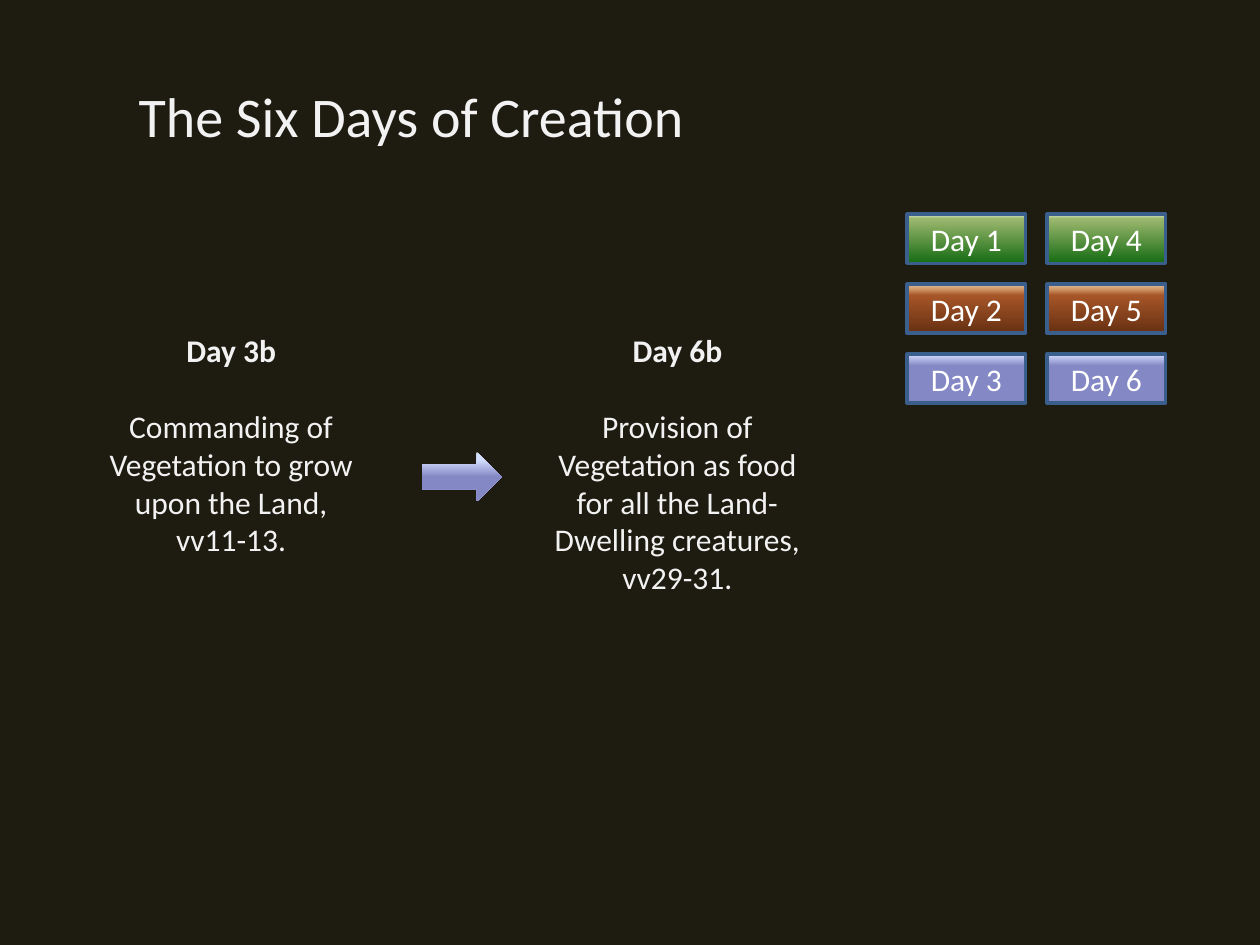
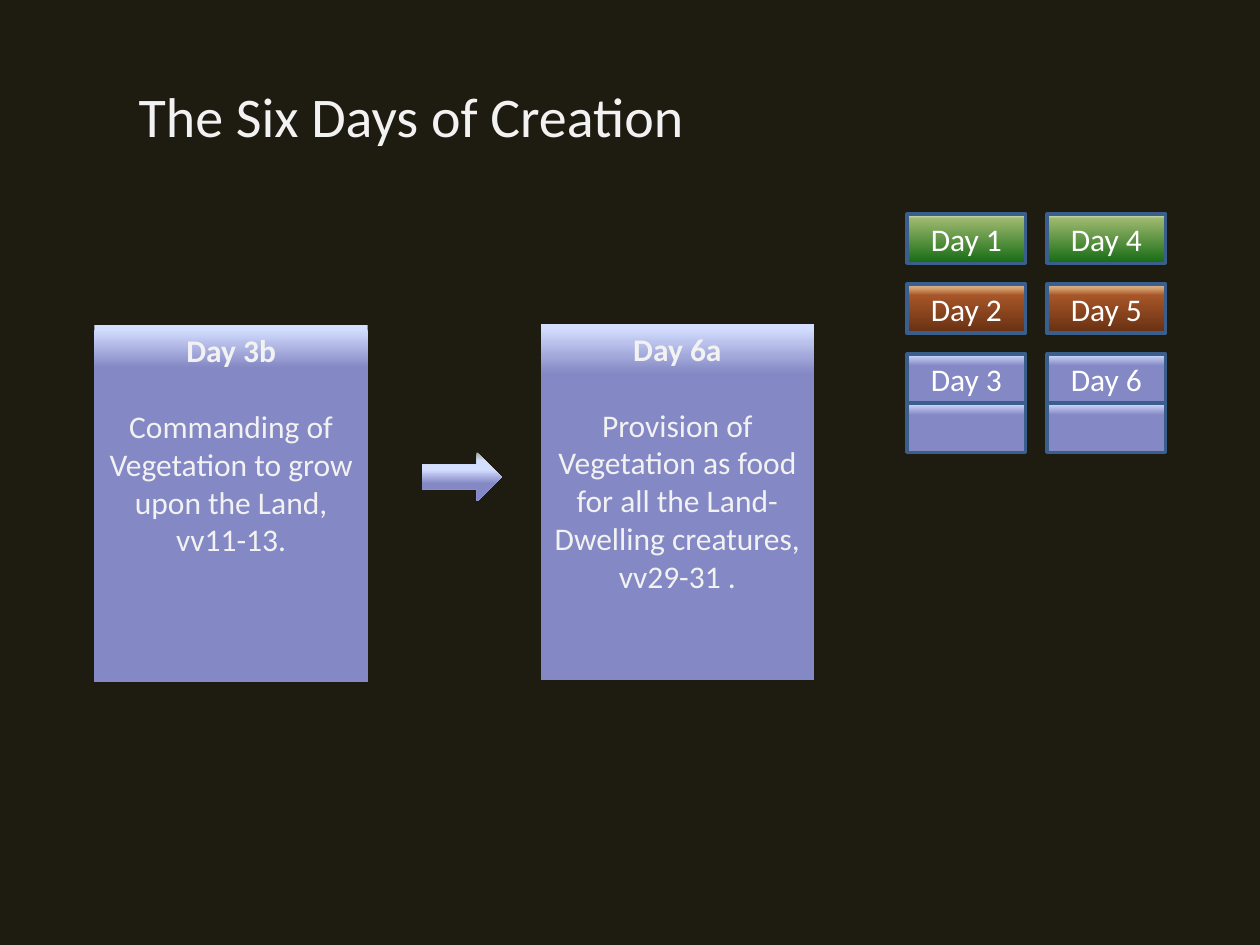
from dataclasses import dataclass
from lxml.etree import SubElement
from pptx import Presentation
from pptx.dml.color import RGBColor
from pptx.enum.shapes import MSO_SHAPE
from pptx.enum.text import MSO_ANCHOR, PP_ALIGN
from pptx.oxml.ns import qn
from pptx.util import Pt


@dataclass(frozen=True)
class Theme:
    font: str = "Calibri"
    title_size: int = 32
    text_size: int = 18
    background: str = "1E1C11"
    text: str = "F2F2F2"
    day_text: str = "FFFFFF"
    day_line: str = "3A5F8C"
    green: tuple = ((0, "DDEBCF"), (9, "9CB86E"), (100, "156B13"))
    brown: tuple = ((2, "D6B19C"), (9, "D49E6C"), (23, "A65528"), (100, "663012"))
    violet: tuple = ((0, "D4DEFF"), (24, "8488C4"))
    left_panel: tuple = ((1, "D4DEFF"), (12, "8488C4"))
    right_panel: tuple = ((1, "D4DEFF"), (14, "8488C4"))
    thin_arrow: tuple = ((0, "96AB94"), (3, "D4DEFF"), (15, "D4DEFF"), (50, "8488C4"))
    broad_arrow: tuple = ((0, "96AB94"), (17, "D4DEFF"), (35, "D4DEFF"), (64, "8488C4"))


THEME = Theme()
SLIDE_W, SLIDE_H = 720, 540
TITLE_BOX = (0, 37.4, SLIDE_W, 56.9)
TITLE_INDENT = 79.2
DAYS_BOX = (518.4, 122.4, 147.6, 108)
DAY_W, DAY_H = 67.6, 28.1
PANEL_W, PANEL_H = 156.2, 203.8
COMPARISON_BOX = (54, 185.8, 411.2, PANEL_H)
ARROW_W, ARROW_H = 45.4, 28.1
HEADING_GAP = 21.6


def style(p, size, color, bold=False):
    for r in p.runs:
        r.font.name = THEME.font
        r.font.size = Pt(size)
        r.font.bold = bold
        r.font.color.rgb = RGBColor.from_string(color)


def fill_gradient(sp, stops):
    sp.fill.gradient()
    sp.fill.gradient_angle = 270
    stop_list = sp._element.spPr.find(".//" + qn("a:gsLst"))
    for old in list(stop_list):
        stop_list.remove(old)
    for position, color in stops:
        stop = SubElement(stop_list, qn("a:gs"), pos=str(position * 1000))
        SubElement(stop, qn("a:srgbClr"), val=color)


def add_block(s, kind, box, stops=None, line=None):
    sp = s.shapes.add_shape(kind, *map(Pt, box))
    sp.shadow.inherit = False
    if stops:
        fill_gradient(sp, stops)
    else:
        sp.fill.background()
    if line:
        sp.line.color.rgb = RGBColor.from_string(line)
        sp.line.width = Pt(2)
    else:
        sp.line.fill.background()
    return sp


def add_title(s, box, text):
    sp = s.shapes.title
    sp.left, sp.top, sp.width, sp.height = map(Pt, box)
    tf = sp.text_frame
    tf.text = text
    tf.margin_left = Pt(TITLE_INDENT)
    tf.vertical_anchor = MSO_ANCHOR.MIDDLE
    p = tf.paragraphs[0]
    p.alignment = PP_ALIGN.LEFT
    style(p, THEME.title_size, THEME.text)


def add_day(s, box, stops, text=""):
    sp = add_block(s, MSO_SHAPE.RECTANGLE, box, stops, THEME.day_line)
    if text:
        tf = sp.text_frame
        tf.text = text
        tf.vertical_anchor = MSO_ANCHOR.MIDDLE
        p = tf.paragraphs[0]
        p.alignment = PP_ALIGN.CENTER
        style(p, THEME.text_size, THEME.day_text)


def add_days(s, box, extended):
    left, top, width, height = box
    rows = (THEME.green, THEME.brown, THEME.violet)
    row_step = (height - DAY_H) / (len(rows) - 1)
    for column in range(2):
        x = left + column * (width - DAY_W)
        for row, stops in enumerate(rows):
            day = column * len(rows) + row + 1
            add_day(s, (x, top + row * row_step, DAY_W, DAY_H), stops, f"Day {day}")
        if extended:
            add_day(s, (x, top + height, DAY_W, DAY_H), THEME.violet)


def add_panel(s, box, heading, body, stops):
    sp = add_block(s, MSO_SHAPE.RECTANGLE, box, stops)
    tf = sp.text_frame
    tf.word_wrap = True
    tf.vertical_anchor = MSO_ANCHOR.TOP
    tf.text = f"{heading}\n{body}"
    first, second = tf.paragraphs
    second.space_before = Pt(HEADING_GAP)
    for p, bold in ((first, True), (second, False)):
        p.alignment = PP_ALIGN.CENTER
        style(p, THEME.text_size, THEME.text, bold)


def add_comparison(s, box, cause, result, arrow, fills=(None, None), rise=0):
    left, top, width, height = box
    add_panel(s, (left, top, PANEL_W, height), *cause, fills[0])
    add_panel(s, (left + width - PANEL_W, top - rise, PANEL_W, height), *result, fills[1])
    arrow_x = left + (width - ARROW_W) / 2 + 4.3
    arrow_y = top + (height - ARROW_H) / 2 - 15.2
    add_block(s, MSO_SHAPE.RIGHT_ARROW, (arrow_x, arrow_y, ARROW_W, ARROW_H), arrow)


def add_creation_slide(prs, extended, **comparison):
    s = prs.slides.add_slide(prs.slide_layouts.get_by_name("Title Only"))
    add_title(s, TITLE_BOX, "The Six Days of Creation")
    add_comparison(s, COMPARISON_BOX, **comparison)
    add_days(s, DAYS_BOX, extended)


def main():
    prs = Presentation()
    prs.slide_width, prs.slide_height = Pt(SLIDE_W), Pt(SLIDE_H)
    background = prs.slide_master.background.fill
    background.solid()
    background.fore_color.rgb = RGBColor.from_string(THEME.background)

    vegetation = ("Day 3b", "Commanding of Vegetation to grow upon the Land, vv11-13.")
    provision = "Provision of Vegetation as food for all the Land-Dwelling creatures, vv29-31"
    add_creation_slide(
        prs,
        extended=False,
        cause=vegetation,
        result=("Day 6b", provision + "."),
        arrow=THEME.thin_arrow,
    )
    add_creation_slide(
        prs,
        extended=True,
        cause=vegetation,
        result=("Day 6a", provision + " ."),
        arrow=THEME.broad_arrow,
        fills=(THEME.left_panel, THEME.right_panel),
        rise=0.7,
    )
    prs.save("out.pptx")


if __name__ == "__main__":
    main()
